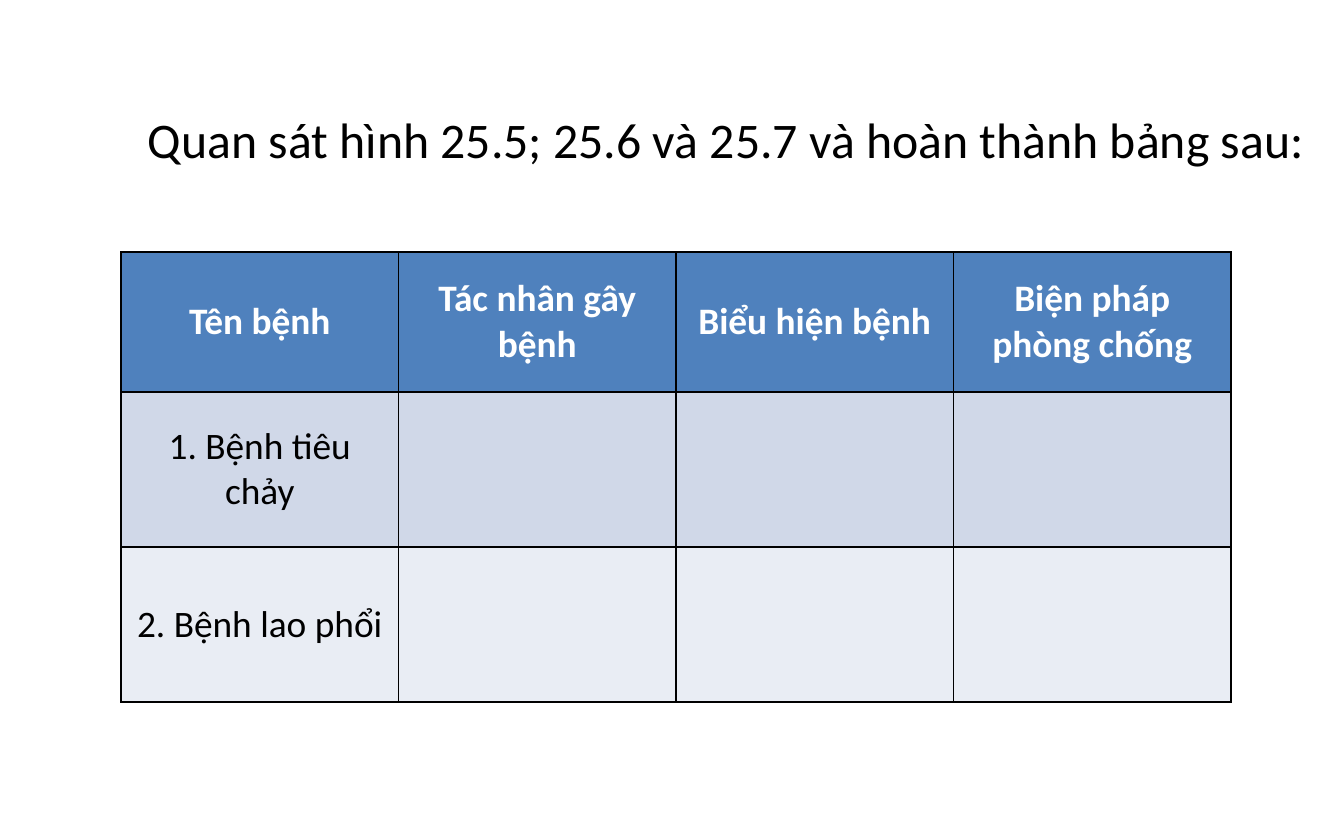
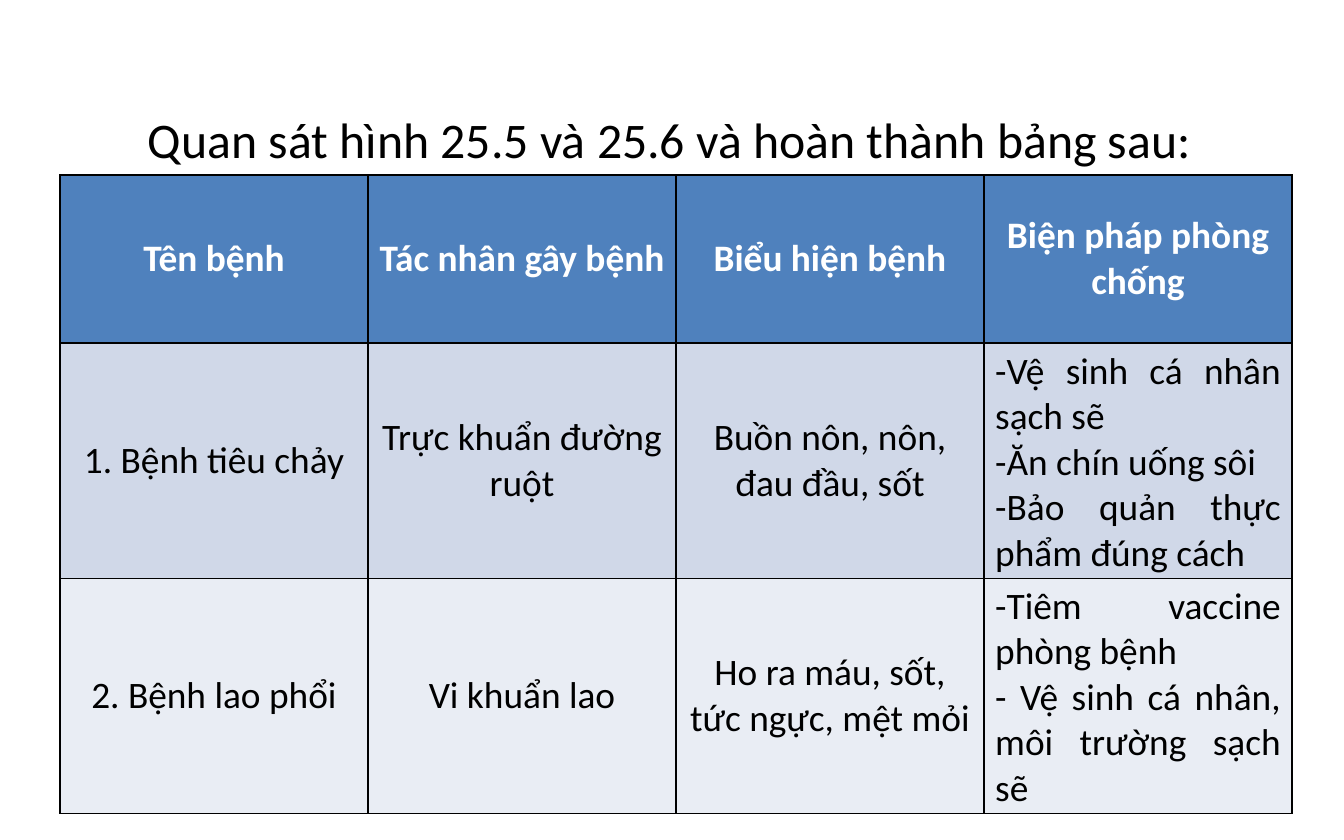
from dataclasses import dataclass

from lxml.etree import SubElement
from pptx import Presentation
from pptx.dml.color import RGBColor
from pptx.enum.text import MSO_ANCHOR as Anchor, MSO_AUTO_SIZE as AutoSize, PP_ALIGN as Align
from pptx.oxml.ns import qn
from pptx.slide import Slide
from pptx.table import _Cell as Cell
from pptx.text.text import _Paragraph as Paragraph
from pptx.util import Emu, Pt

# Shared scale and style
PX_PER_INCH = 112
FONT = "Calibri"
BLACK, WHITE = "000000", "FFFFFF"
HEADER_FILL = "4F81BD"
BAND_FILLS = ("D0D8E8", "E9EDF4")
TITLE_SIZE, CELL_SIZE = 32, 24
HEADERS = ("Tên bệnh", "Tác nhân gây bệnh", "Biểu hiện bệnh", "Biện pháp phòng chống")
DIARRHEA, TUBERCULOSIS = "1. Bệnh tiêu chảy", "2. Bệnh lao phổi"


@dataclass(frozen=True)
class DiseaseTable:
    left: int
    top: int
    width: int
    header_height: int
    row_height: int
    rows: tuple[tuple[str, ...], ...]


@dataclass(frozen=True)
class Exercise:
    title: str
    title_width: int
    table: DiseaseTable


EXERCISES = (
    Exercise(
        "Quan sát hình 25.5; 25.6 và 25.7 và hoàn thành bảng sau:", 1193,
        DiseaseTable(121, 252, 1110, 140, 155, (
            (DIARRHEA, "", "", ""),
            (TUBERCULOSIS, "", "", ""),
        )),
    ),
    Exercise(
        "Quan sát hình 25.5 và 25.6 và hoàn thành bảng sau:", 1079,
        DiseaseTable(60, 175, 1232, 168, 187, (
            (DIARRHEA, "Trực khuẩn đường ruột", "Buồn nôn, nôn, đau đầu, sốt",
             "-Vệ sinh cá nhân sạch sẽ\n-Ăn chín uống sôi\n-Bảo quản thực phẩm đúng cách"),
            (TUBERCULOSIS, "Vi khuẩn lao", "Ho ra máu, sốt, tức ngực, mệt mỏi",
             "-Tiêm vaccine phòng bệnh\n- Vệ sinh cá nhân, môi trường sạch sẽ"),
        )),
    ),
)


def px(length: float) -> Emu:
    return Emu(round(length * 914400 / PX_PER_INCH))


def color(value: str) -> RGBColor:
    return RGBColor.from_string(value)


def add_run(paragraph: Paragraph, text: str, size: int, text_color: str, bold: bool = False) -> None:
    run = paragraph.add_run()
    run.text = text
    run.font.name = FONT
    run.font.size = Pt(size)
    run.font.bold = bold
    run.font.color.rgb = color(text_color)


# Title above the table
def add_title(slide: Slide, exercise: Exercise) -> None:
    shape = slide.shapes.add_textbox(px(137), px(103), px(exercise.title_width), px(72))
    frame = shape.text_frame
    frame.word_wrap = False
    frame.auto_size = AutoSize.SHAPE_TO_FIT_TEXT
    add_run(frame.paragraphs[0], exercise.title, TITLE_SIZE, BLACK)


# Table cells
def add_borders(cell: Cell) -> None:
    properties = cell._tc.get_or_add_tcPr()
    for side in ("lnL", "lnR", "lnT", "lnB"):
        line = SubElement(properties, qn(f"a:{side}"), w=str(Pt(1)))
        fill = SubElement(line, qn("a:solidFill"))
        SubElement(fill, qn("a:srgbClr"), val=BLACK)


def fill_cell(cell: Cell, text: str, fill: str, is_header: bool, align: Align) -> None:
    add_borders(cell)
    cell.fill.solid()
    cell.fill.fore_color.rgb = color(fill)
    cell.vertical_anchor = Anchor.MIDDLE
    frame = cell.text_frame
    for index, line in enumerate(text.splitlines()):
        paragraph = frame.add_paragraph() if index else frame.paragraphs[0]
        paragraph.alignment = align
        add_run(paragraph, line, CELL_SIZE, WHITE if is_header else BLACK, is_header)


def add_disease_table(slide: Slide, spot: DiseaseTable) -> None:
    rows = (HEADERS, *spot.rows)
    heights = [spot.header_height] + [spot.row_height] * len(spot.rows)
    table = slide.shapes.add_table(
        len(rows), len(HEADERS), px(spot.left), px(spot.top), px(spot.width), px(sum(heights))
    ).table
    for column in table.columns:
        column.width = px(spot.width / len(HEADERS))
    for row_index, (texts, height) in enumerate(zip(rows, heights)):
        table.rows[row_index].height = px(height)
        is_header = row_index == 0
        fill = HEADER_FILL if is_header else BAND_FILLS[(row_index - 1) % 2]
        for column_index, text in enumerate(texts):
            is_measures = not is_header and column_index == len(HEADERS) - 1
            align = Align.JUSTIFY if is_measures else Align.CENTER
            fill_cell(table.cell(row_index, column_index), text, fill, is_header, align)


def main() -> None:
    presentation = Presentation()
    presentation.slide_width, presentation.slide_height = px(1344), px(840)
    for exercise in EXERCISES:
        slide = presentation.slides.add_slide(presentation.slide_layouts[6])
        add_title(slide, exercise)
        add_disease_table(slide, exercise.table)
    presentation.save("out.pptx")


if __name__ == "__main__":
    main()
